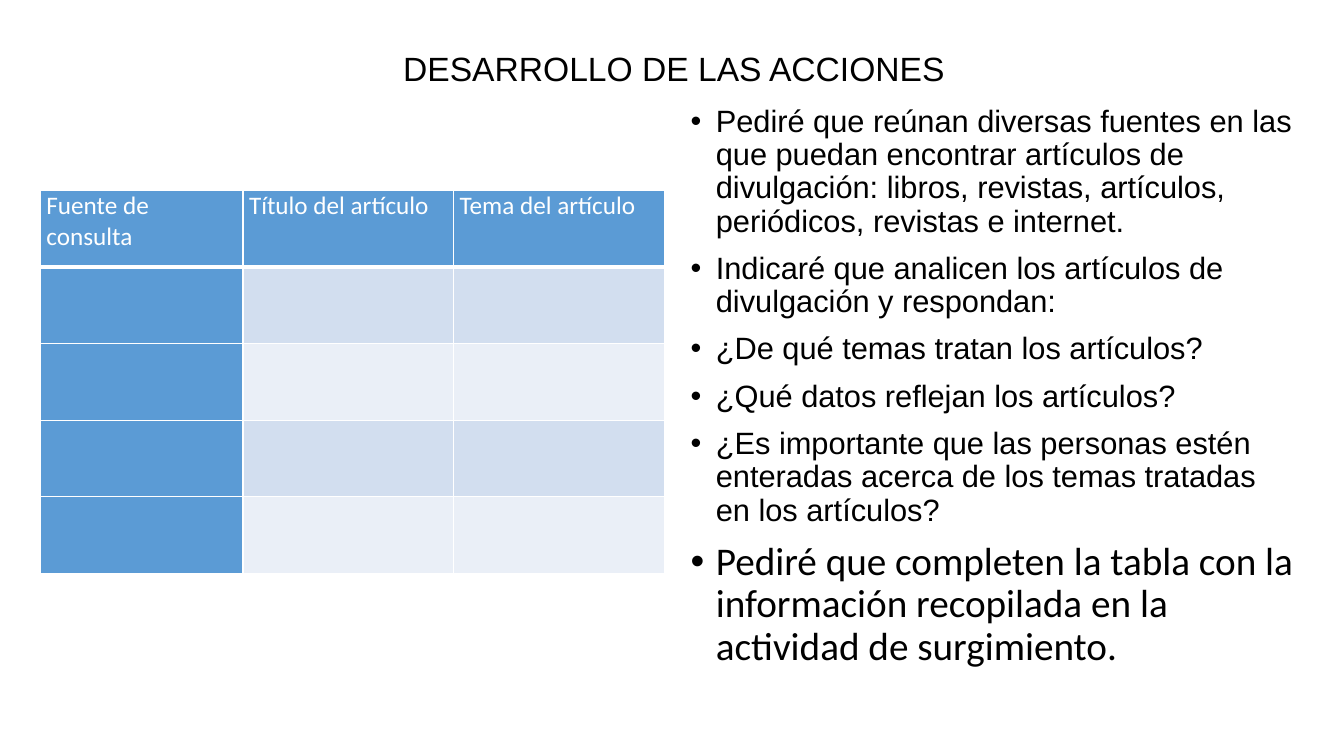
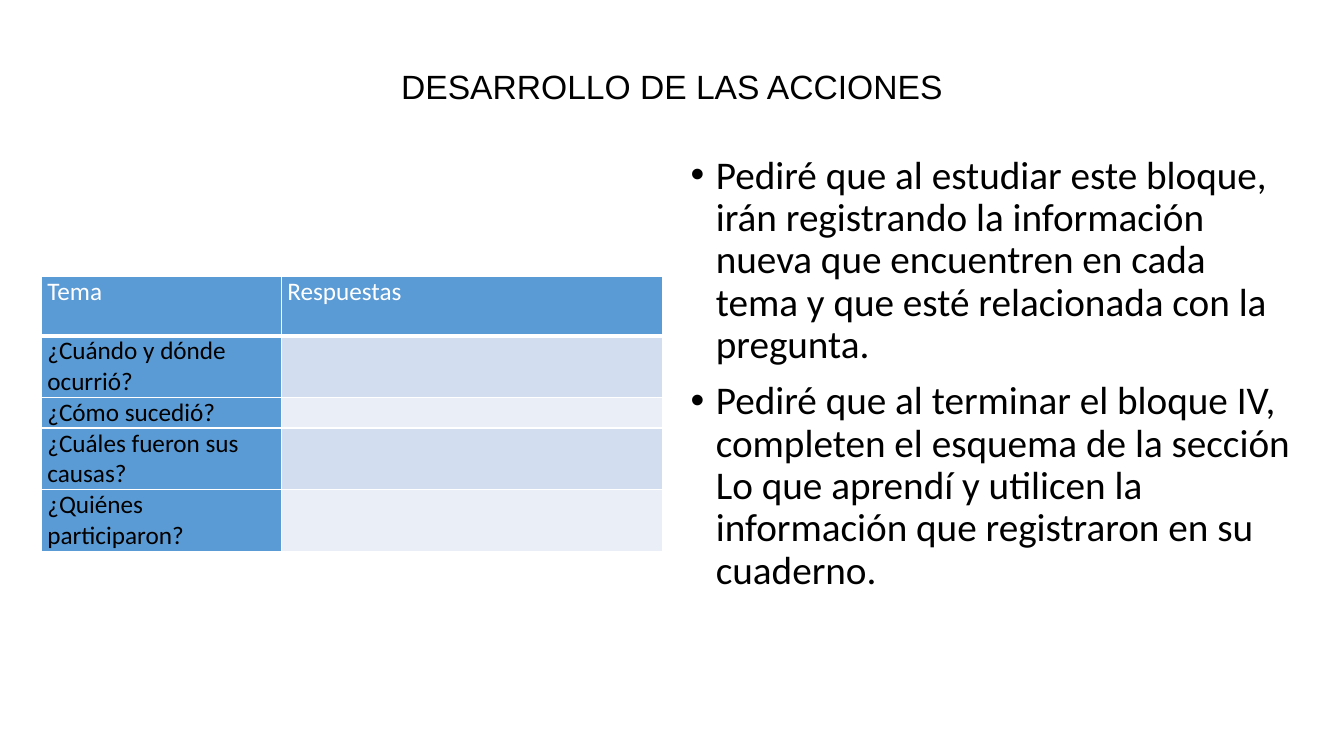
from lxml import etree
from pptx import Presentation
from pptx import util as u
from pptx.dml.color import RGBColor
from pptx.enum import text
from pptx.oxml import ns

BLACK = RGBColor(0x00, 0x00, 0x00)
WHITE = RGBColor(0xFF, 0xFF, 0xFF)
BLUE = RGBColor(0x5B, 0x9B, 0xD5)
BANDS = (RGBColor(0xD2, 0xDE, 0xEF), RGBColor(0xEA, 0xEF, 0xF7))
TITLE = "DESARROLLO DE LAS ACCIONES"
TITLE_AND_CONTENT = 1


def style_font(font, name, size, color, bold=False):
    font.name, font.size, font.bold = name, u.Pt(size), bold
    font.color.rgb = color


def place(shape, box):
    shape.left, shape.top, shape.width, shape.height = map(u.Inches, box)


def add_title(page, box):
    title = page.shapes.title
    place(title, box)
    frame = title.text_frame
    frame.text = TITLE
    frame.word_wrap = True
    frame.auto_size = text.MSO_AUTO_SIZE.NONE
    frame.vertical_anchor = text.MSO_ANCHOR.MIDDLE
    para = frame.paragraphs[0]
    para.alignment = text.PP_ALIGN.CENTER
    para.line_spacing = 0.9
    style_font(para.font, "Arial", 24, BLACK)


def add_bullets(page, box, items):
    """Fill the body placeholder; each item is (wording, font name, size)."""
    body = page.placeholders[1]
    place(body, box)
    frame = body.text_frame
    frame.word_wrap = True
    frame.auto_size = text.MSO_AUTO_SIZE.NONE
    frame.vertical_anchor = text.MSO_ANCHOR.TOP
    frame.text = "\n".join(wording for wording, _, _ in items)
    for para, (_, name, size) in zip(frame.paragraphs, items):
        para.line_spacing = 0.9
        para.space_before = u.Pt(10)
        style_font(para.font, name, size, BLACK)
        # Hanging indent; the bullet sign comes from the template
        props = para._p.get_or_add_pPr()
        props.set("marL", str(u.Inches(0.25)))
        props.set("indent", str(-u.Inches(0.25)))


def set_borders(cell, widths):
    """Draw white borders, given the widths by side."""
    props = cell._tc.get_or_add_tcPr()
    for index, side in enumerate("LRTB"):
        line = etree.Element(ns.qn(f"a:ln{side}"), w=str(u.Pt(widths.get(side, 1))))
        fill = etree.SubElement(line, ns.qn("a:solidFill"))
        etree.SubElement(fill, ns.qn("a:srgbClr"), val=str(WHITE))
        props.insert(index, line)


def fill_cell(cell, wording, size, align):
    cell.margin_left = cell.margin_right = u.Inches(0.06)
    cell.margin_top = cell.margin_bottom = 0
    para = cell.text_frame.paragraphs[0]
    if wording:
        cell.text = wording
        para.alignment = align
        para.line_spacing = 1.07
        style_font(para.font, "Calibri", size, WHITE, bold=True)
    else:
        # Keeps empty rows from growing
        etree.SubElement(para._p, ns.qn("a:endParaRPr"), sz=str(size * 100))


def add_grid(page, left, top, widths, heights, header, labels, size, align):
    """Add a table with a blue header row and a blue first column."""
    box = map(u.Inches, (left, top, sum(widths), sum(heights)))
    table = page.shapes.add_table(len(heights), len(widths), *box).table
    for column, width in zip(table.columns, widths):
        column.width = u.Inches(width)
    for row, height in zip(table.rows, heights):
        row.height = u.Inches(height)
    blanks = [""] * (len(widths) - 1)
    wording = [header] + [[label, *blanks] for label in labels]
    for r, texts in enumerate(wording):
        for c, cell_text in enumerate(texts):
            cell = table.cell(r, c)
            fill_cell(cell, cell_text, size, align)
            cell.fill.solid()
            is_blue = r == 0 or c == 0
            cell.fill.fore_color.rgb = BLUE if is_blue else BANDS[(r - 1) % 2]
            # Thick rule below the header
            set_borders(cell, {0: {"B": 3}, 1: {"T": 3}}.get(r, {}))


def add_page(deck, title_box, body_box, items, grid):
    page = deck.slides.add_slide(deck.slide_layouts[TITLE_AND_CONTENT])
    add_title(page, title_box)
    add_grid(page, **grid)
    add_bullets(page, body_box, items)


def main():
    deck = Presentation()
    deck.slide_width, deck.slide_height = u.Inches(13.33), u.Inches(7.5)

    # Sources table and its instructions
    steps = (
        "Pediré que reúnan diversas fuentes en las que puedan encontrar artículos "
        "de divulgación: libros, revistas, artículos, periódicos, revistas e internet.",
        "Indicaré que analicen los artículos de divulgación y respondan:",
        "¿De qué temas tratan los artículos?",
        "¿Qué datos reflejan los artículos?",
        "¿Es importante que las personas estén enteradas acerca de los temas "
        "tratadas en los artículos?",
    )
    closing = ("Pediré que completen la tabla con la información recopilada en la "
               "actividad de surgimiento.")
    add_page(
        deck, (0.4, 0.4, 12.57, 0.6), (6.75, 1, 6.22, 6.31),
        [(step, "Arial", 22) for step in steps] + [(closing, "Calibri", 28)],
        dict(left=0.4, top=1.89, widths=(2.01, 2.09, 2.09), heights=[0.76] * 5,
             header=("Fuente de consulta", "Título del artículo", "Tema del artículo"),
             labels=[""] * 4, size=16, align=text.PP_ALIGN.CENTER))

    # Questions table and its instructions
    steps = (
        "Pediré que al estudiar este bloque, irán registrando la información nueva "
        "que encuentren en cada tema y que esté relacionada con la pregunta.",
        "Pediré que al terminar el bloque IV, completen el esquema de la sección "
        "Lo que aprendí y utilicen la información que registraron en su cuaderno.",
    )
    add_page(
        deck, (0.41, 0.4, 12.51, 0.96), (6.75, 1.49, 6.18, 5.76),
        [(step, "Calibri", 28) for step in steps],
        dict(left=0.41, top=2.74, widths=(2.38, 3.78),
             heights=(0.59, 0.59, 0.23, 0.59, 0.59), header=("Tema", "Respuestas"),
             labels=("¿Cuándo y dónde ocurrió?", "¿Cómo sucedió?",
                     "¿Cuáles fueron sus causas?", "¿Quiénes participaron?"),
             size=8, align=text.PP_ALIGN.LEFT))

    deck.save("out.pptx")


if __name__ == "__main__":
    main()
